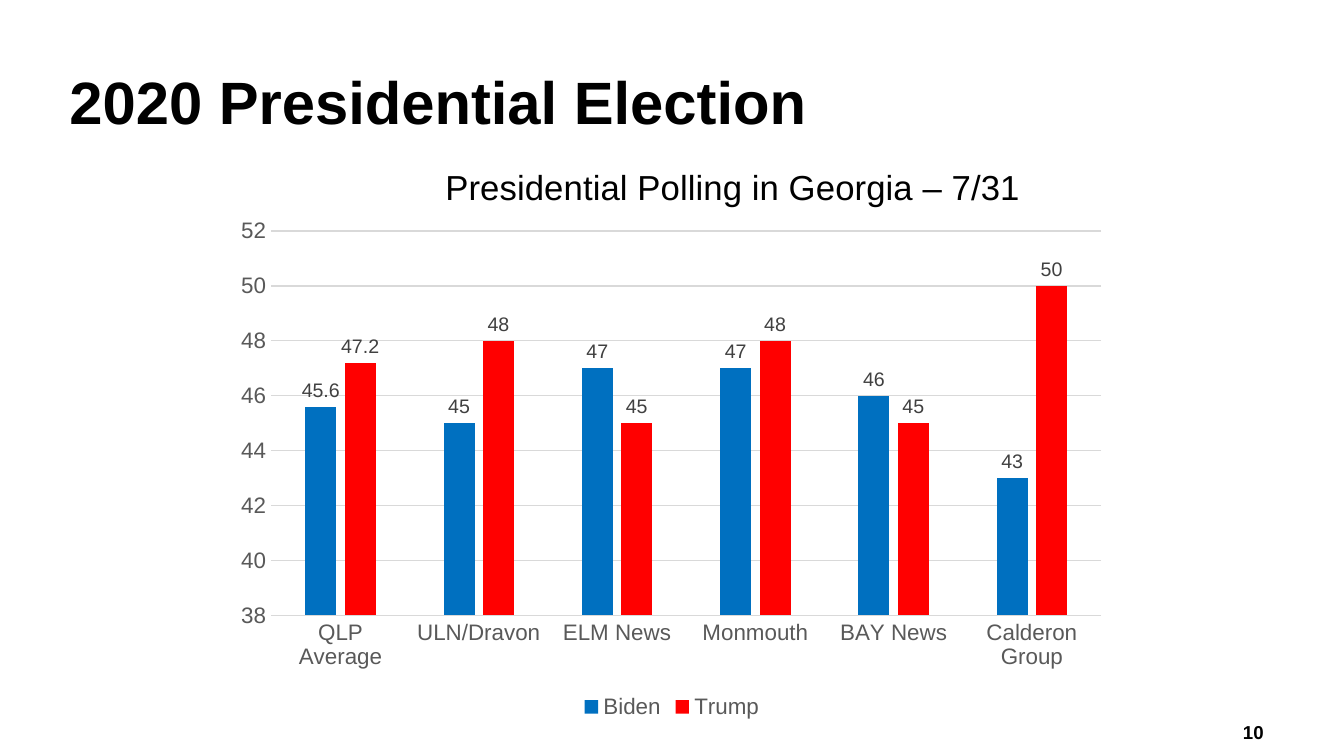
from dataclasses import dataclass

from lxml.etree import SubElement
from pptx import Presentation
from pptx.chart.data import CategoryChartData
from pptx.dml.color import RGBColor
from pptx.enum.chart import XL_CHART_TYPE as ChartType
from pptx.enum.chart import XL_LABEL_POSITION as LabelPosition
from pptx.enum.chart import XL_LEGEND_POSITION as LegendPosition
from pptx.enum.chart import XL_TICK_MARK as TickMark
from pptx.enum.text import MSO_ANCHOR as Anchor
from pptx.enum.text import MSO_AUTO_SIZE as AutoSize
from pptx.enum.text import PP_ALIGN as Align
from pptx.oxml.ns import qn
from pptx.util import Pt


@dataclass(frozen=True)
class Theme:
    font: str = "Arial"
    black: str = "000000"
    axis_text: str = "595959"
    label_text: str = "404040"
    grid: str = "D9D9D9"
    blue: str = "0070C0"
    red: str = "FF0000"
    title_size: float = 32
    chart_title_size: float = 18.6
    axis_size: float = 12
    label_size: float = 10.5
    number_size: float = 10
    grid_width: float = 0.75


theme = Theme()


def style_font(font, size, color, bold=False):
    font.name = theme.font
    font.size = Pt(size)
    font.bold = bold
    font.color.rgb = RGBColor.from_string(color)


def set_layout(parent, index, **fractions):
    """Place a chart part by fractions of the chart's size."""
    for old in parent.findall(qn("c:layout")):
        parent.remove(old)
    layout = SubElement(parent, qn("c:layout"))
    parent.insert(index, layout)
    manual = SubElement(layout, qn("c:manualLayout"))
    if "w" in fractions:
        SubElement(manual, qn("c:layoutTarget")).set("val", "inner")
    for axis in ("x", "y"):
        SubElement(manual, qn(f"c:{axis}Mode")).set("val", "edge")
    for name, value in fractions.items():
        SubElement(manual, qn(f"c:{name}")).set("val", str(value))


deck = Presentation()
deck.slide_width, deck.slide_height = Pt(720), Pt(405)
page = deck.slides.add_slide(deck.slide_layouts[5])

# Title
title = page.shapes.title
title.left, title.top, title.width, title.height = Pt(30), Pt(27.5), Pt(684), Pt(52.5)
title.text_frame.auto_size = AutoSize.NONE
title.text_frame.vertical_anchor = Anchor.MIDDLE
para = title.text_frame.paragraphs[0]
para.alignment = Align.LEFT
span = para.add_run()
span.text = "2020 Presidential Election"
style_font(span.font, theme.title_size, theme.black, bold=True)

# Poll results
polls = CategoryChartData()
polls.categories = ["QLP Average", "ULN/Dravon", "ELM News",
                    "Monmouth", "BAY News", "Calderon Group"]
polls.add_series("Biden", (45.6, 45, 47, 47, 46, 43))
polls.add_series("Trump", (47.2, 48, 45, 48, 45, 50))
chart = page.shapes.add_chart(ChartType.COLUMN_CLUSTERED, Pt(120), Pt(68.5),
                              Pt(480), Pt(319.5), polls).chart
style_font(chart.font, theme.number_size, theme.black)
set_layout(chart.element.find(f".//{qn('c:plotArea')}"), 0,
           x=0.053, y=0.173, w=0.926, h=0.645)

# Chart title
span = chart.chart_title.text_frame.paragraphs[0].add_run()
span.text = "Presidential Polling in Georgia – 7/31"
style_font(span.font, theme.chart_title_size, theme.black)
chart.chart_title.include_in_layout = False
set_layout(chart.chart_title.element, 1, x=0.24, y=0.05)

# Columns and value labels
plot = chart.plots[0]
plot.vary_by_categories = False
plot.gap_width, plot.overlap = 219, -27
for series, color in zip(plot.series, (theme.blue, theme.red)):
    series.format.fill.solid()
    series.format.fill.fore_color.rgb = RGBColor.from_string(color)
    series.invert_if_negative = False
    labels = series.data_labels
    labels.show_value = True
    labels.position = LabelPosition.OUTSIDE_END
    style_font(labels.font, theme.label_size, theme.label_text)

# Axes and grid
values, categories = chart.value_axis, chart.category_axis
values.minimum_scale, values.maximum_scale, values.major_unit = 38, 52, 2
for axis in (values, categories):
    axis.major_tick_mark = axis.minor_tick_mark = TickMark.NONE
    style_font(axis.tick_labels.font, theme.axis_size, theme.axis_text)
values.format.line.fill.background()
for line in (values.major_gridlines.format.line, categories.format.line):
    line.color.rgb = RGBColor.from_string(theme.grid)
    line.width = Pt(theme.grid_width)

# Legend
chart.has_legend = True
chart.legend.position = LegendPosition.BOTTOM
chart.legend.include_in_layout = False
style_font(chart.legend.font, theme.axis_size, theme.axis_text)

# Page number
box = page.shapes.add_textbox(Pt(516), Pt(382.5), Pt(168), Pt(22))
box.text_frame.word_wrap = True
para = box.text_frame.paragraphs[0]
para.alignment = Align.RIGHT
span = para.add_run()
span.text = "10"
style_font(span.font, theme.number_size, theme.black, bold=True)

deck.save("out.pptx")
